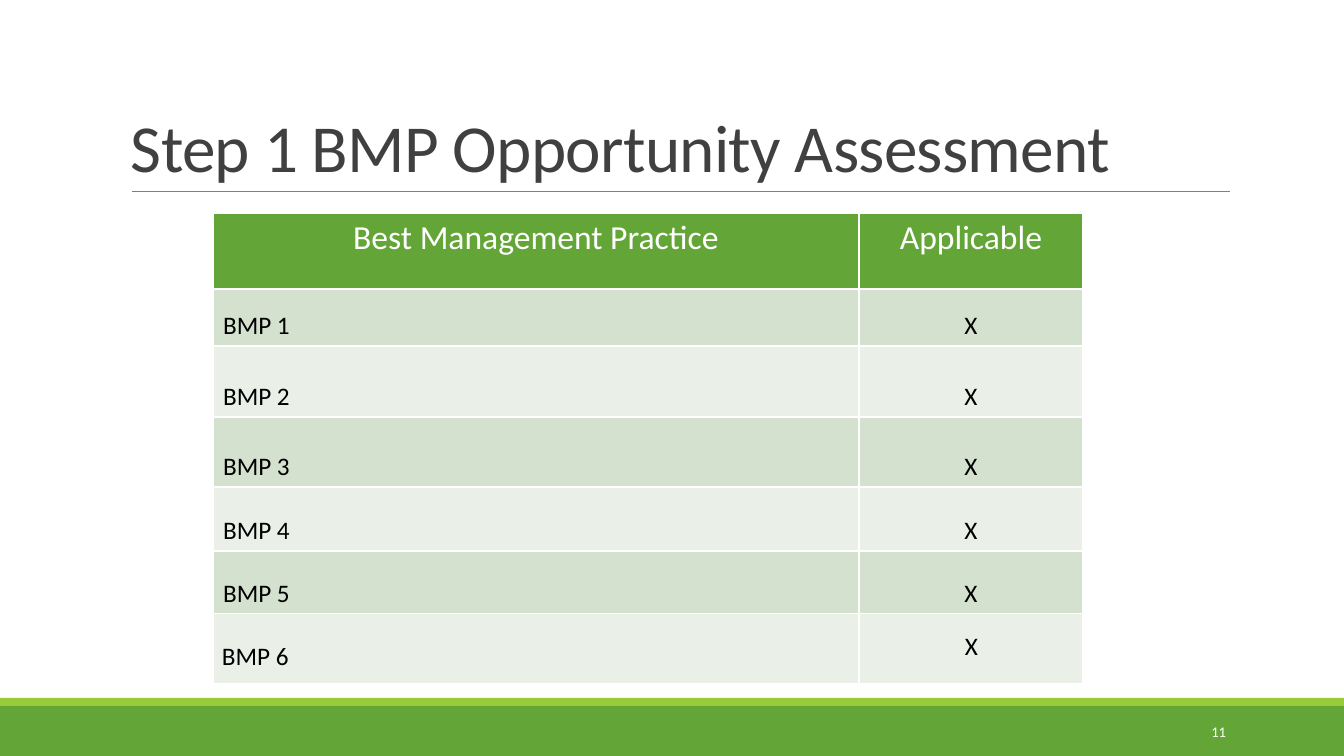
from dataclasses import dataclass

import pptx
import pptx.dml.color
import pptx.enum.shapes
import pptx.enum.text
import pptx.oxml
import pptx.util

EMU_PER_PX = 914400 / 100.8
ALIGN = pptx.enum.text.PP_ALIGN
ANCHOR = pptx.enum.text.MSO_ANCHOR


@dataclass(frozen=True)
class Theme:
    font: str = "Calibri"
    title_size: float = 48
    header_size: float = 24
    body_size: float = 18
    number_size: float = 10.5
    green: str = "63A537"
    lime: str = "99CB38"
    odd_row: str = "D3E1CE"
    even_row: str = "EAF0E8"
    rule: str = "808080"
    title: str = "404040"
    dark: str = "000000"
    light: str = "FFFFFF"


@dataclass(frozen=True)
class Band:
    top: int
    height: int
    color: str


@dataclass(frozen=True)
class Label:
    text: str
    box: tuple[int, int, int, int]
    size: float
    color: str
    align: ALIGN = ALIGN.LEFT
    anchor: ANCHOR = ANCHOR.TOP
    line_spacing: float = 1.0
    tracking: int = 0  # hundredths of a point


THEME = Theme()
SLIDE_WIDTH, SLIDE_HEIGHT = 1344, 756
TABLE_LEFT, TABLE_TOP = 213, 213
COLUMN_WIDTHS = (646, 224)
ROW_HEIGHTS = (76, 57, 71, 70, 64, 63, 70)
HEADINGS = ("Best Management Practice", "Applicable")
# The last row stays empty: its entries are free labels
PRACTICES = [(f"BMP {number}", "X") for number in range(1, 6)] + [("", "")]

BANDS = (Band(706, 50, THEME.green), Band(698, 8, THEME.lime))
LABELS = (
    Label("Step 1 BMP Opportunity Assessment", (121, 31, 1109, 160),
          THEME.title_size, THEME.title, anchor=ANCHOR.BOTTOM,
          line_spacing=0.85, tracking=-50),
    Label("BMP 6", (212, 635, 126, 41), THEME.body_size, THEME.dark),
    Label("X", (955, 625, 38, 41), THEME.body_size, THEME.dark),
    Label("11", (1092, 712, 144, 40), THEME.number_size, THEME.light,
          ALIGN.RIGHT, ANCHOR.MIDDLE),
)


def px(length: int) -> pptx.util.Emu:
    return pptx.util.Emu(round(length * EMU_PER_PX))


def rgb(color: str) -> pptx.dml.color.RGBColor:
    return pptx.dml.color.RGBColor.from_string(color)


def style_paragraph(paragraph, size: float, color: str, align: ALIGN) -> None:
    paragraph.alignment = align
    paragraph.font.name = THEME.font
    paragraph.font.size = pptx.util.Pt(size)
    paragraph.font.bold = False
    paragraph.font.color.rgb = rgb(color)


def draw_band(slide, band: Band) -> None:
    bar = slide.shapes.add_shape(
        pptx.enum.shapes.MSO_SHAPE.RECTANGLE,
        0, px(band.top), px(SLIDE_WIDTH), px(band.height))
    bar.shadow.inherit = False
    bar.fill.solid()
    bar.fill.fore_color.rgb = rgb(band.color)
    bar.line.fill.background()


def draw_title_rule(slide) -> None:
    rule = slide.shapes.add_connector(
        pptx.enum.shapes.MSO_CONNECTOR.STRAIGHT,
        px(132), px(191), px(1230), px(191))
    rule.line.color.rgb = rgb(THEME.rule)
    rule.line.width = pptx.util.Pt(0.5)
    rule._element.spPr.append(pptx.oxml.parse_xml(
        '<a:effectLst xmlns:a='
        '"http://schemas.openxmlformats.org/drawingml/2006/main"/>'))


def draw_label(slide, label: Label) -> None:
    frame = slide.shapes.add_textbox(*map(px, label.box)).text_frame
    frame.word_wrap = True
    frame.vertical_anchor = label.anchor
    paragraph = frame.paragraphs[0]
    run = paragraph.add_run()
    run.text = label.text
    paragraph.line_spacing = label.line_spacing
    style_paragraph(paragraph, label.size, label.color, label.align)
    if label.tracking:
        run.font._element.set("spc", str(label.tracking))


def draw_practice_table(slide) -> None:
    practices = slide.shapes.add_table(
        len(ROW_HEIGHTS), len(COLUMN_WIDTHS), px(TABLE_LEFT), px(TABLE_TOP),
        px(sum(COLUMN_WIDTHS)), px(sum(ROW_HEIGHTS))).table
    for column, width in zip(practices.columns, COLUMN_WIDTHS):
        column.width = px(width)
    for row, height in zip(practices.rows, ROW_HEIGHTS):
        row.height = px(height)

    for row_index, entries in enumerate([HEADINGS, *PRACTICES]):
        is_header = row_index == 0
        if is_header:
            fill, size, color = THEME.green, THEME.header_size, THEME.light
        else:
            fill = THEME.odd_row if row_index % 2 else THEME.even_row
            size, color = THEME.body_size, THEME.dark
        for column_index, entry in enumerate(entries):
            cell = practices.cell(row_index, column_index)
            cell.fill.solid()
            cell.fill.fore_color.rgb = rgb(fill)
            cell.vertical_anchor = ANCHOR.TOP if is_header else ANCHOR.BOTTOM
            cell.text = entry
            centred = is_header or column_index == 1
            style_paragraph(cell.text_frame.paragraphs[0], size, color,
                            ALIGN.CENTER if centred else ALIGN.LEFT)


def main() -> None:
    presentation = pptx.Presentation()
    presentation.slide_width = px(SLIDE_WIDTH)
    presentation.slide_height = px(SLIDE_HEIGHT)
    slide = presentation.slides.add_slide(presentation.slide_layouts[6])

    # Footer bands and title rule
    for band in BANDS:
        draw_band(slide, band)
    draw_title_rule(slide)

    # Practices, then the title, last-row entries and page number
    draw_practice_table(slide)
    for label in LABELS:
        draw_label(slide, label)

    presentation.save("out.pptx")


if __name__ == "__main__":
    main()
